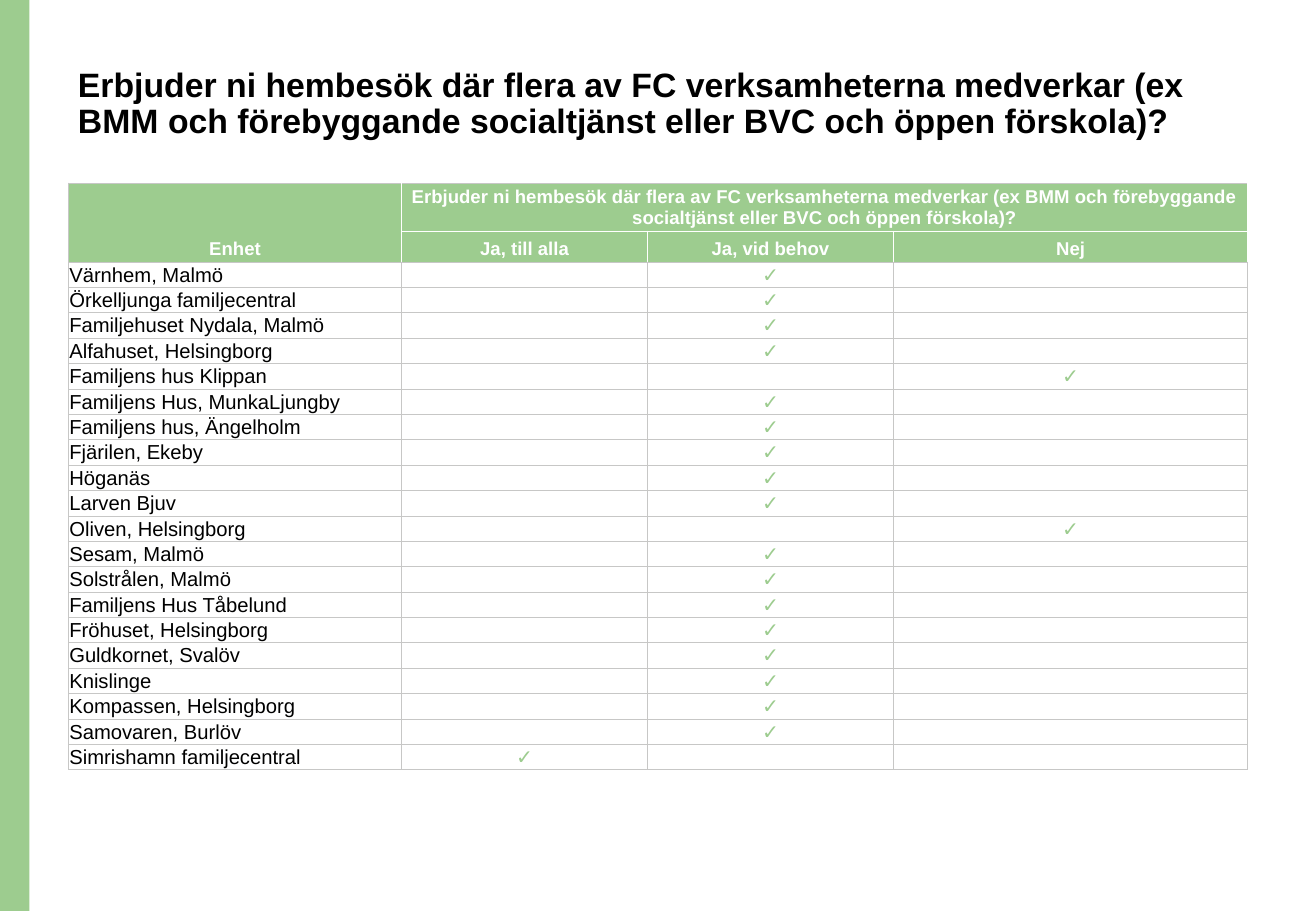
"""Builds a slide with a table of home visits offered by family centres."""
from lxml.etree import SubElement
from pptx import Presentation
from pptx.dml.color import RGBColor
from pptx.enum.shapes import MSO_SHAPE
from pptx.enum.text import MSO_ANCHOR, PP_ALIGN
from pptx.oxml.ns import qn
from pptx.util import Pt

GREEN, GREY, WHITE, BLACK = "9DCC8F", "C7C7C6", "FFFFFF", "000000"
QUESTION = (
    "Erbjuder ni hembesök där flera av FC verksamheterna medverkar "
    "(ex BMM och förebyggande socialtjänst eller BVC och öppen förskola)?"
)
ANSWERS = ["Ja, till alla", "Ja, vid behov", "Nej"]
UNITS = [
    ("Värnhem, Malmö", 2),
    ("Örkelljunga familjecentral", 2),
    ("Familjehuset Nydala, Malmö", 2),
    ("Alfahuset, Helsingborg", 2),
    ("Familjens hus Klippan", 3),
    ("Familjens Hus, MunkaLjungby", 2),
    ("Familjens hus, Ängelholm", 2),
    ("Fjärilen, Ekeby", 2),
    ("Höganäs", 2),
    ("Larven Bjuv", 2),
    ("Oliven, Helsingborg", 3),
    ("Sesam, Malmö", 2),
    ("Solstrålen, Malmö", 2),
    ("Familjens Hus Tåbelund", 2),
    ("Fröhuset, Helsingborg", 2),
    ("Guldkornet, Svalöv", 2),
    ("Knislinge", 2),
    ("Kompassen, Helsingborg", 2),
    ("Samovaren, Burlöv", 2),
    ("Simrishamn familjecentral", 1),
]
HEADER_FORMAT = {
    "vertical_anchor": MSO_ANCHOR.BOTTOM,
    "margin_left": Pt(1.5), "margin_right": Pt(1.5),
    "margin_top": Pt(1.5), "margin_bottom": Pt(1.5),
}
BODY_FORMAT = {
    "vertical_anchor": MSO_ANCHOR.MIDDLE,
    "margin_left": Pt(0.5), "margin_right": Pt(0.5),
    "margin_top": Pt(0.4), "margin_bottom": Pt(0),
}


def color(value):
    return RGBColor.from_string(value)


def add_borders(cell, edges):
    properties = cell._tc.get_or_add_tcPr()
    for position, (edge, value) in enumerate(edges.items()):
        line = SubElement(properties, qn(f"a:ln{edge}"), w=str(Pt(0.5)))
        fill = SubElement(line, qn("a:solidFill"))
        SubElement(fill, qn("a:srgbClr"), val=value)
        properties.insert(position, line)


presentation = Presentation()
presentation.slide_width, presentation.slide_height = Pt(780), Pt(540)
slide = presentation.slides.add_slide(presentation.slide_layouts[5])

band = slide.shapes.add_shape(MSO_SHAPE.RECTANGLE, 0, 0, Pt(17.5), Pt(540))
band.shadow.inherit = False
band.fill.solid()
band.fill.fore_color.rgb = color(GREEN)
band.line.fill.background()

title = slide.shapes.title
title_place = {"left": Pt(39), "top": Pt(36.7), "width": Pt(699), "height": Pt(71.3)}
for name, value in title_place.items():
    setattr(title, name, value)
title.text_frame.text = QUESTION
title.text_frame.vertical_anchor = MSO_ANCHOR.TOP
paragraph = title.text_frame.paragraphs[0]
paragraph.alignment = PP_ALIGN.LEFT
paragraph.line_spacing = 0.9
font = paragraph.runs[0].font
for name, value in {"name": "Arial", "size": Pt(20), "bold": True}.items():
    setattr(font, name, value)
font.color.rgb = color(BLACK)

rows = [["Enhet", QUESTION, "", ""], ["", *ANSWERS]]
for unit, answer in UNITS:
    rows.append([unit] + ["✓" if column == answer else "" for column in (1, 2, 3)])

column_widths = [197.5, 145.8, 145.8, 209.9]
row_heights = [28.4, 18.4] + [14.2] * len(UNITS)
table = slide.shapes.add_table(
    len(rows), len(column_widths), Pt(40.6), Pt(108.5),
    Pt(sum(column_widths)), Pt(sum(row_heights)),
).table
for column, width in zip(table.columns, column_widths):
    column.width = Pt(width)
for row, height in zip(table.rows, row_heights):
    row.height = Pt(height)

for row_index, texts in enumerate(rows):
    header = row_index < 2
    size = 11 if header else 12
    for column_index, text in enumerate(texts):
        cell = table.cell(row_index, column_index)
        answer_column = column_index > 0
        for name, value in (HEADER_FORMAT if header else BODY_FORMAT).items():
            setattr(cell, name, value)
        cell.fill.solid()
        cell.fill.fore_color.rgb = color(GREEN if header else WHITE)
        white_edges = {
            "L": header and answer_column,
            "R": header and (column_index < 3 or row_index == 1),
            "T": row_index == 1 and answer_column,
            "B": row_index == 0 and answer_column,
        }
        add_borders(cell, {edge: WHITE if white else GREY for edge, white in white_edges.items()})
        paragraph = cell.text_frame.paragraphs[0]
        paragraph.alignment = PP_ALIGN.CENTER if header or answer_column else PP_ALIGN.LEFT
        if text:
            run = paragraph.add_run()
            run.text = text
            for name, value in {"name": "Arial", "size": Pt(size), "bold": header}.items():
                setattr(run.font, name, value)
            run.font.color.rgb = color(WHITE if header else GREEN if answer_column else BLACK)
        else:
            SubElement(paragraph._p, qn("a:endParaRPr"), sz=str(size * 100))

table.cell(0, 0).merge(table.cell(1, 0))
table.cell(0, 1).merge(table.cell(0, 3))

presentation.save("out.pptx")
